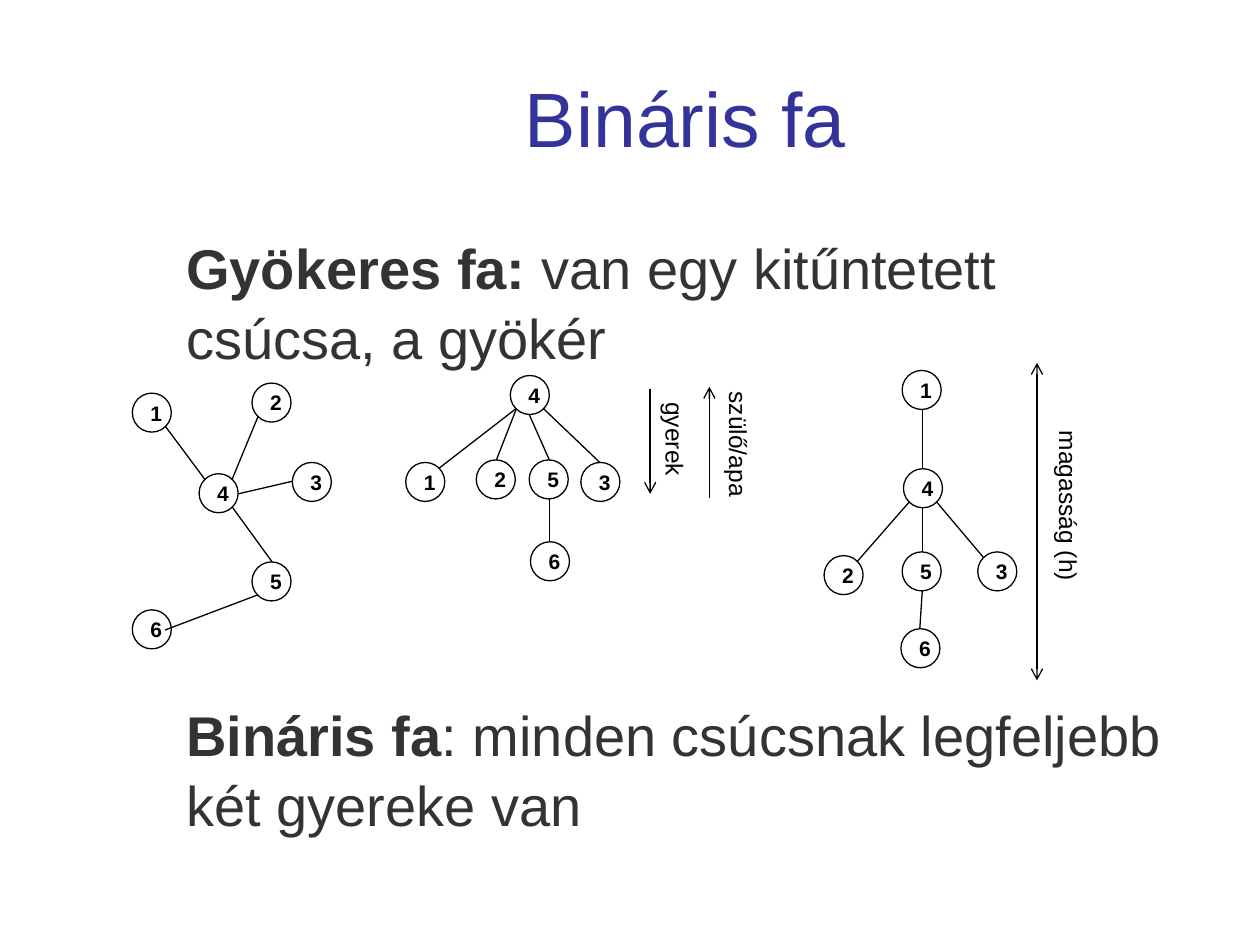
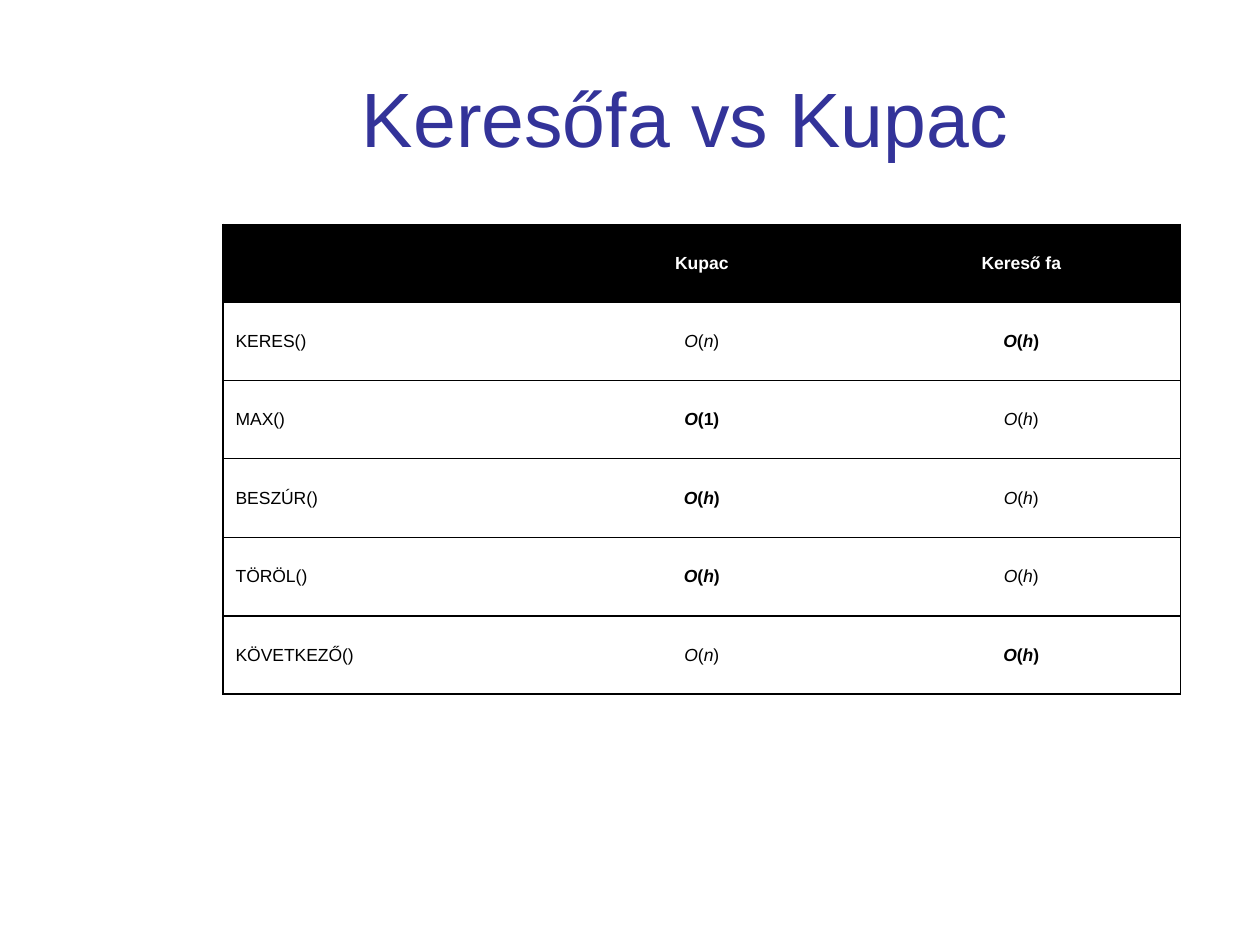
from dataclasses import dataclass
from enum import Enum
from itertools import groupby
from typing import NamedTuple

from lxml.etree import SubElement
from pptx import Presentation
from pptx.dml.color import RGBColor
from pptx.enum.shapes import MSO_CONNECTOR as Connector, MSO_SHAPE as Shape
from pptx.enum.text import MSO_ANCHOR as Anchor, MSO_AUTO_SIZE as AutoSize, PP_ALIGN as Align
from pptx.oxml.ns import qn
from pptx.slide import Slide
from pptx.table import _Cell as Cell
from pptx.text.text import _Paragraph as Paragraph
from pptx.util import Emu, Pt

EMU_PER_PX = 9144  # 100 px to the inch
NODE_SIZE = 31


@dataclass(frozen=True)
class Theme:
    font: str = "Arial"
    title: RGBColor = RGBColor(0x33, 0x33, 0x99)
    body: RGBColor = RGBColor(0x33, 0x33, 0x33)
    ink: RGBColor = RGBColor(0, 0, 0)
    paper: RGBColor = RGBColor(255, 255, 255)
    title_size: int = 44
    body_size: int = 32
    label_size: int = 14
    node_size: int = 12
    table_size: int = 10
    line_width: float = 0.75


THEME = Theme()


class Point(NamedTuple):
    x: int
    y: int


class Box(NamedTuple):
    left: int
    top: int
    width: int
    height: int


class Site(Enum):
    """Places on a node, as shares of its width and height."""
    TOP = (0.5, 0)
    TOP_LEFT = (0.15, 0.15)
    LEFT = (0, 0.5)
    BOTTOM_LEFT = (0.15, 0.85)
    BOTTOM = (0.5, 1)
    BOTTOM_RIGHT = (0.85, 0.85)
    RIGHT = (1, 0.5)
    TOP_RIGHT = (0.85, 0.15)
    INSIDE_RIGHT = (0.85, 0.5)


class Edge(NamedTuple):
    start: int
    start_site: Site
    end: int
    end_site: Site


class Tree(NamedTuple):
    nodes: dict[int, Point]
    edges: list[Edge]


class Direction(NamedTuple):
    caption: str
    caption_box: Box
    start: Point
    end: Point
    arrowheads: tuple[str, ...]


class Operation(NamedTuple):
    name: str
    heap_cost: str
    search_tree_cost: str
    best_column: int


TITLE_BOX = Box(138, 30, 812, 125)
BODY_BOX = Box(138, 178, 812, 473)
TABLE_BOX = Box(177, 178, 760, 373)

DEFINITIONS = [
    ("Gyökeres fa: ", "van egy kitűntetett csúcsa, a gyökér"),
    ("Bináris fa", ": minden csúcsnak legfeljebb két gyereke van"),
]
DIAGRAM_GAP = 187  # points between the definitions

FREE_TREE = Tree(
    {1: Point(105, 312), 2: Point(200, 304), 4: Point(158, 376),
     3: Point(232, 367), 5: Point(200, 446), 6: Point(105, 484)},
    [Edge(1, Site.BOTTOM_RIGHT, 4, Site.TOP_LEFT),
     Edge(4, Site.TOP_RIGHT, 2, Site.BOTTOM_LEFT),
     Edge(4, Site.RIGHT, 3, Site.LEFT),
     Edge(4, Site.BOTTOM_RIGHT, 5, Site.TOP),
     Edge(5, Site.BOTTOM_LEFT, 6, Site.INSIDE_RIGHT)],
)
ROOTED_AT_4 = Tree(
    {1: Point(322, 367), 2: Point(378, 365), 4: Point(405, 298),
     3: Point(461, 367), 5: Point(420, 365), 6: Point(421, 430)},
    [Edge(1, Site.TOP_RIGHT, 4, Site.BOTTOM_LEFT),
     Edge(4, Site.BOTTOM_LEFT, 2, Site.TOP),
     Edge(4, Site.BOTTOM_RIGHT, 3, Site.TOP),
     Edge(4, Site.BOTTOM, 5, Site.TOP),
     Edge(5, Site.BOTTOM, 6, Site.TOP)],
)
ROOTED_AT_1 = Tree(
    {1: Point(716, 294), 2: Point(654, 441), 4: Point(717, 372),
     3: Point(776, 438), 5: Point(716, 438), 6: Point(715, 499)},
    [Edge(1, Site.BOTTOM, 4, Site.TOP),
     Edge(2, Site.TOP_RIGHT, 4, Site.BOTTOM_LEFT),
     Edge(4, Site.BOTTOM_RIGHT, 3, Site.TOP_LEFT),
     Edge(4, Site.BOTTOM, 5, Site.TOP),
     Edge(5, Site.BOTTOM, 6, Site.TOP)],
)
DIRECTIONS = [
    Direction("gyerek", Box(496, 332, 79, 34), Point(516, 309), Point(516, 392), ("tailEnd",)),
    Direction("szülő/apa", Box(534, 336, 104, 34), Point(563, 395), Point(563, 307), ("tailEnd",)),
    Direction("magasság (h)", Box(778, 385, 140, 34), Point(823, 288), Point(823, 540),
              ("headEnd", "tailEnd")),
]

HEADINGS = ("", "Kupac", "Kereső fa")
OPERATIONS = [
    Operation("KERES()", "O(n)", "O(h)", 2),
    Operation("MAX()", "O(1)", "O(h)", 1),
    Operation("BESZÚR()", "O(h)", "O(h)", 1),
    Operation("TÖRÖL()", "O(h)", "O(h)", 1),
    Operation("KÖVETKEZŐ()", "O(n)", "O(h)", 2),
]


def px(length: int) -> Emu:
    return Emu(length * EMU_PER_PX)


def emu(lengths: tuple[int, ...]) -> list[Emu]:
    return [px(length) for length in lengths]


def split(total: int, count: int) -> list[int]:
    """Divide a length into near-equal whole parts."""
    stops = [round(total * i / count) for i in range(count + 1)]
    return [end - start for start, end in zip(stops, stops[1:])]


def style(paragraph: Paragraph, size: int, color: RGBColor,
          align: Align = Align.LEFT, bold: bool | None = None) -> None:
    paragraph.alignment = align
    font = paragraph.font
    font.name, font.size, font.bold = THEME.font, Pt(size), bold
    font.color.rgb = color


def add_title(slide: Slide, title: str) -> None:
    frame = slide.shapes.add_textbox(*emu(TITLE_BOX)).text_frame
    frame.word_wrap = True
    frame.vertical_anchor = Anchor.MIDDLE
    frame.text = title
    style(frame.paragraphs[0], THEME.title_size, THEME.title, Align.CENTER)


def add_definitions(slide: Slide) -> None:
    frame = slide.shapes.add_textbox(*emu(BODY_BOX)).text_frame
    frame.word_wrap = True
    for i, (term, meaning) in enumerate(DEFINITIONS):
        paragraph = frame.add_paragraph() if i else frame.paragraphs[0]
        style(paragraph, THEME.body_size, THEME.body)
        paragraph.line_spacing = 1.04
        if i:
            paragraph.space_before = Pt(DIAGRAM_GAP)
        for text, bold in ((term, True), (meaning, False)):
            run = paragraph.add_run()
            run.text, run.font.bold = text, bold


def add_line(slide: Slide, start: Point, end: Point, arrowheads: tuple[str, ...] = ()) -> None:
    connector = slide.shapes.add_connector(Connector.STRAIGHT, *emu(start), *emu(end))
    connector.line.color.rgb = THEME.ink
    connector.line.width = Pt(THEME.line_width)
    outline = connector.line._get_or_add_ln()
    for end_name in arrowheads:
        SubElement(outline, qn(f"a:{end_name}"), type="arrow")
    SubElement(connector._element.spPr, qn("a:effectLst"))


def add_node(slide: Slide, number: int, corner: Point) -> None:
    node = slide.shapes.add_shape(Shape.OVAL, *emu((*corner, NODE_SIZE, NODE_SIZE)))
    node.shadow.inherit = False
    node.fill.background()
    node.line.color.rgb = THEME.ink
    node.line.width = Pt(THEME.line_width)
    node.text_frame.text = str(number)
    style(node.text_frame.paragraphs[0], THEME.node_size, THEME.ink, Align.CENTER, bold=True)


def site_point(corner: Point, site: Site) -> Point:
    across, down = site.value
    return Point(round(corner.x + across * NODE_SIZE), round(corner.y + down * NODE_SIZE))


def add_tree(slide: Slide, tree: Tree) -> None:
    for number, corner in tree.nodes.items():
        add_node(slide, number, corner)
    for edge in tree.edges:
        add_line(slide, site_point(tree.nodes[edge.start], edge.start_site),
                 site_point(tree.nodes[edge.end], edge.end_site))


def add_direction(slide: Slide, direction: Direction) -> None:
    add_line(slide, direction.start, direction.end, direction.arrowheads)
    caption = slide.shapes.add_textbox(*emu(direction.caption_box))
    caption.rotation = 90
    frame = caption.text_frame
    frame.word_wrap = False
    frame.auto_size = AutoSize.SHAPE_TO_FIT_TEXT
    frame.text = direction.caption
    style(frame.paragraphs[0], THEME.label_size, THEME.ink)


def set_borders(cell: Cell, drawn: str) -> None:
    """Draw the named sides (of L, R, T, B) and clear the others."""
    properties = cell._tc.get_or_add_tcPr()
    for i, side in enumerate("LRTB"):
        border = properties.makeelement(qn(f"a:ln{side}"), {"w": str(Pt(THEME.line_width))})
        properties.insert(i, border)
        if side in drawn:
            fill = SubElement(border, qn("a:solidFill"))
            SubElement(fill, qn("a:srgbClr"), val=str(THEME.ink))
        else:
            SubElement(border, qn("a:noFill"))


def add_formula(paragraph: Paragraph, formula: str) -> None:
    """Set letters in italics and all other signs upright."""
    for is_letter, signs in groupby(formula, str.isalpha):
        run = paragraph.add_run()
        run.text, run.font.italic = "".join(signs), is_letter


def add_cost_table(slide: Slide) -> None:
    rows = [HEADINGS, *(operation[:3] for operation in OPERATIONS)]
    last_column = len(HEADINGS) - 1
    table = slide.shapes.add_table(len(rows), len(HEADINGS), *emu(TABLE_BOX)).table
    table.first_row = table.horz_banding = False
    for column, width in zip(table.columns, split(TABLE_BOX.width, len(HEADINGS))):
        column.width = px(width)
    for row, height in zip(table.rows, split(TABLE_BOX.height, len(rows))):
        row.height = px(height)
    for r, texts in enumerate(rows):
        for c, text in enumerate(texts):
            cell = table.cell(r, c)
            cell.vertical_anchor = Anchor.MIDDLE
            if r == 0:
                cell.fill.solid()
                cell.fill.fore_color.rgb = THEME.ink
            else:
                cell.fill.background()
            set_borders(cell, "TB" + "L" * (c == 0) + "R" * (c == last_column))
            paragraph = cell.text_frame.paragraphs[0]
            style(paragraph, THEME.table_size, THEME.ink if r else THEME.paper,
                  Align.CENTER if c else Align.LEFT,
                  bold=r == 0 or c == OPERATIONS[r - 1].best_column)
            if r and c:
                add_formula(paragraph, text)
            elif text:
                paragraph.add_run().text = text


def main() -> None:
    deck = Presentation()
    deck.slide_width, deck.slide_height = px(1000), px(750)
    blank = deck.slide_layouts[6]

    binary_tree = deck.slides.add_slide(blank)
    add_title(binary_tree, "Bináris fa")
    add_definitions(binary_tree)
    for tree in (FREE_TREE, ROOTED_AT_4, ROOTED_AT_1):
        add_tree(binary_tree, tree)
    for direction in DIRECTIONS:
        add_direction(binary_tree, direction)

    comparison = deck.slides.add_slide(blank)
    add_title(comparison, "Keresőfa vs Kupac")
    add_cost_table(comparison)

    deck.save("out.pptx")


if __name__ == "__main__":
    main()
